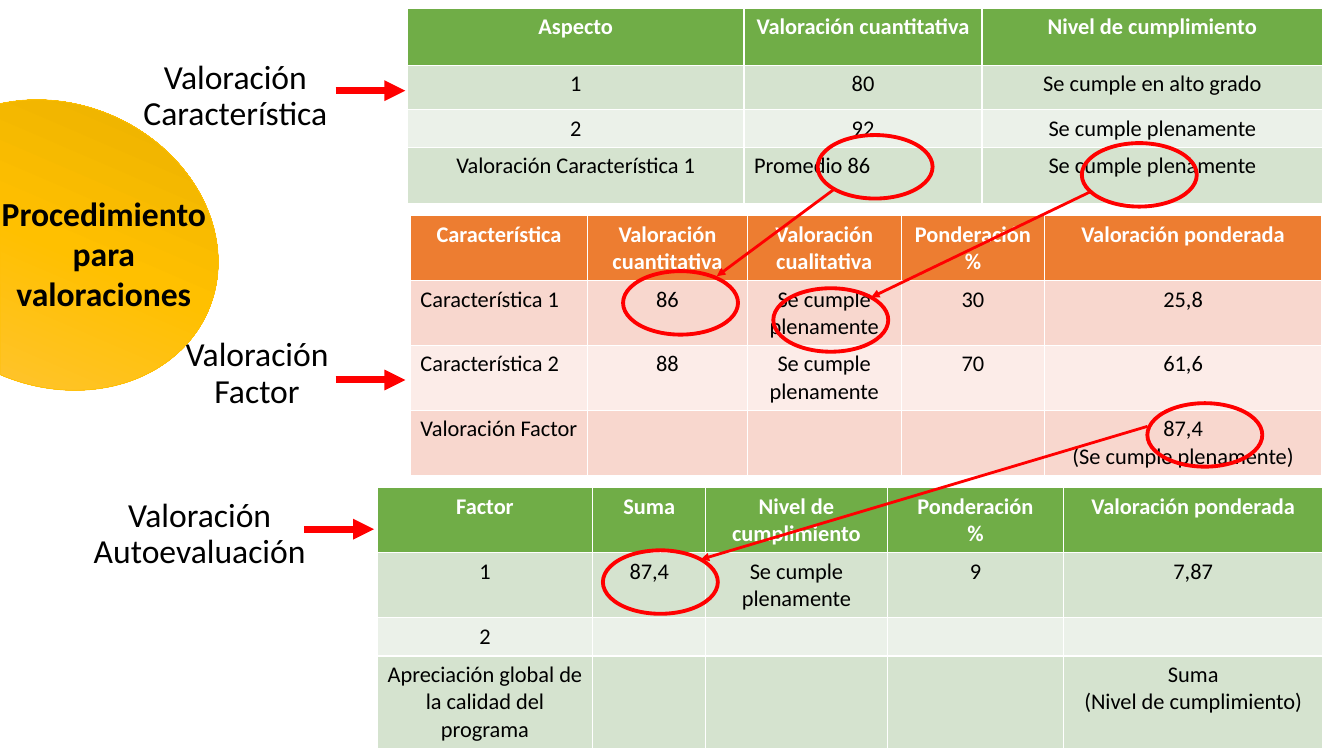
from copy import deepcopy

from lxml.etree import SubElement
from pptx import Presentation
from pptx.dml.color import RGBColor
from pptx.enum.shapes import MSO_CONNECTOR, MSO_SHAPE
from pptx.enum.text import MSO_ANCHOR, PP_ALIGN
from pptx.oxml.ns import qn
from pptx.util import Inches, Pt

BLACK = RGBColor(0x00, 0x00, 0x00)
WHITE = RGBColor(0xFF, 0xFF, 0xFF)
RED = RGBColor(0xFF, 0x00, 0x00)
GOLD = RGBColor(0xFF, 0xC0, 0x00)
LIGHT_GOLD = RGBColor(0xFF, 0xC6, 0x4B)
DARK_GOLD = RGBColor(0xE3, 0xAB, 0x00)
GREEN = RGBColor(0x70, 0xAD, 0x47)
GREEN_BAND = RGBColor(0xD5, 0xE3, 0xCF)
GREEN_PALE = RGBColor(0xEB, 0xF1, 0xE9)
ORANGE = RGBColor(0xED, 0x7D, 0x31)
ORANGE_BAND = RGBColor(0xF8, 0xD7, 0xCE)
ORANGE_PALE = RGBColor(0xFC, 0xEC, 0xE8)

GREEN_THEME = (GREEN, GREEN_BAND, GREEN_PALE)
ORANGE_THEME = (ORANGE, ORANGE_BAND, ORANGE_PALE)

HEADER_FONT = {"name": "Calibri", "size": Pt(16), "bold": True}
BODY_FONT = {"name": "Calibri", "size": Pt(16), "bold": False}
LABEL_FONT = {"name": "Calibri", "size": Pt(24), "bold": False}
TITLE_FONT = {"name": "Calibri", "size": Pt(24), "bold": True}

RING_SIZE = (1.14, 0.63)
STAGE_ARROW_LENGTH = 0.69

ASPECT_ROWS = [
    ["Aspecto", "Valoración cuantitativa", "Nivel de cumplimiento"],
    ["1", "80", "Se cumple en alto grado"],
    ["2", "92", "Se cumple plenamente"],
    ["Valoración Característica 1", "Promedio 86", "Se cumple plenamente"],
]
FEATURE_ROWS = [
    ["Característica", "Valoración cuantitativa", "Valoración cualitativa",
     "Ponderación\n%", "Valoración ponderada"],
    ["Característica 1", "86", "Se cumple plenamente", "30", "25,8"],
    ["Característica 2", "88", "Se cumple plenamente", "70", "61,6"],
    ["Valoración Factor", "", "", "", "87,4\n(Se cumple plenamente)"],
]
FACTOR_ROWS = [
    ["Factor", "Suma", "Nivel de cumplimiento", "Ponderación\n%", "Valoración ponderada"],
    ["1", "87,4", "Se cumple plenamente", "9", "7,87"],
    ["2", "", "", "", ""],
    ["Apreciación global de la calidad del programa", "", "", "",
     "Suma\n(Nivel de cumplimiento)"],
]

TABLES = [
    ((4.04, 0.08), [3.34, 2.36, 3.38], [0.57, 0.44, 0.37, 0.56],
     ASPECT_ROWS, GREEN_THEME, {(3, 1)}),
    ((4.07, 2.14), [1.76, 1.58, 1.53, 1.42, 2.75], [0.64] * 4,
     FEATURE_ROWS, ORANGE_THEME, {(1, 0), (2, 0), (3, 0)}),
    ((3.74, 4.84), [2.14, 1.12, 1.8, 1.75, 2.57], [0.63, 0.63, 0.37, 0.9],
     FACTOR_ROWS, GREEN_THEME, set()),
]
STAGES = [
    ((1.02, 0.57, 2.63, 0.8), "Valoración Característica", (2.31, 0.33)),
    ((1.36, 3.27, 2.38, 0.85), "Valoración Factor", (1.97, 0.5)),
    ((0.79, 4.86, 2.38, 0.85), "Valoración Autoevaluación", (2.23, 0.39)),
]
TRANSFERS = [
    ((8.11, 1.34), (0.16, 0.54), (6.18, 2.69), (0.93, 0.05)),
    ((10.73, 1.42), (0.09, 0.48), (7.67, 2.86), (0.97, 0.09)),
    ((11.38, 4.0), (0, 0.23), (5.98, 5.46), (0.97, 0.09)),
]


def style_paragraph(paragraph, font_format, color, alignment=PP_ALIGN.CENTER):
    paragraph.alignment = alignment
    for run in paragraph.runs or [paragraph.add_run()]:
        for name, value in font_format.items():
            setattr(run.font, name, value)
        run.font.color.rgb = color


def add_text(slide, box, text, font_format, anchor):
    text_frame = slide.shapes.add_textbox(*map(Inches, box)).text_frame
    for name, value in {"word_wrap": True, "vertical_anchor": anchor, "text": text}.items():
        setattr(text_frame, name, value)
    paragraph = text_frame.paragraphs[0]
    style_paragraph(paragraph, font_format, BLACK)
    return paragraph


def add_arrow(slide, start, end, width):
    arrow = slide.shapes.add_connector(
        MSO_CONNECTOR.STRAIGHT, *map(Inches, (*start, *end)))
    arrow.line.color.rgb = RED
    arrow.line.width = Pt(width)
    SubElement(arrow.line._get_or_add_ln(), qn("a:tailEnd"), type="triangle")
    SubElement(arrow._element.spPr, qn("a:effectLst"))


def shift(origin, offset):
    return origin[0] + offset[0], origin[1] + offset[1]


def add_valuation_table(slide, corner, widths, heights, rows, theme, left_cells):
    box = (*corner, sum(widths), sum(heights))
    table = slide.shapes.add_table(len(rows), len(widths), *map(Inches, box)).table
    for column, width in zip(table.columns, widths):
        column.width = Inches(width)
    for row, height in zip(table.rows, heights):
        row.height = Inches(height)
    header_fill, band_fill, pale_fill = theme
    for row_index, texts in enumerate(rows):
        is_header = row_index == 0
        body_fill = band_fill if row_index % 2 else pale_fill
        font_format = HEADER_FONT if is_header else BODY_FONT
        for column_index, text in enumerate(texts):
            cell = table.cell(row_index, column_index)
            cell.fill.solid()
            cell.fill.fore_color.rgb = header_fill if is_header else body_fill
            cell.text_frame.text = text
            is_left = (row_index, column_index) in left_cells
            alignment = PP_ALIGN.LEFT if is_left else PP_ALIGN.CENTER
            for paragraph in cell.text_frame.paragraphs:
                style_paragraph(paragraph, font_format, WHITE if is_header else BLACK, alignment)


def add_stage(slide, box, text, arrow_offset):
    add_text(slide, box, text, LABEL_FONT, MSO_ANCHOR.BOTTOM).line_spacing = 0.9
    start = shift(box, arrow_offset)
    add_arrow(slide, start, shift(start, (STAGE_ARROW_LENGTH, 0)), 5)


def add_transfer(slide, source, start_offset, target, end_offset):
    for corner in (source, target):
        ring = slide.shapes.add_shape(MSO_SHAPE.OVAL, *map(Inches, (*corner, *RING_SIZE)))
        ring.shadow.inherit = False
        ring.fill.background()
        ring.line.color.rgb = RED
        ring.line.width = Pt(2.75)
    add_arrow(slide, shift(source, start_offset), shift(target, end_offset), 2)


def add_title(slide, box):
    left, top, width, height = box
    chord = slide.shapes.add_shape(MSO_SHAPE.CHORD, *map(Inches, box))
    chord.shadow.inherit = False
    chord.rotation = 203.3
    chord.adjustments[0] = 26.92
    chord.adjustments[1] = 162
    chord.line.color.rgb = GOLD
    chord.line.width = Pt(0.5)
    chord.fill.gradient()
    chord.fill.gradient_angle = 270
    stop_list = chord._element.spPr.find(qn("a:gradFill")).find(qn("a:gsLst"))
    stop_list.insert(1, deepcopy(stop_list[0]))
    stops = zip(chord.fill.gradient_stops, (0, 0.5, 1), (LIGHT_GOLD, GOLD, DARK_GOLD))
    for stop, position, color in stops:
        stop.position = position
        stop.color.rgb = color
    add_text(slide, (left + 0.93, top + 0.83, 2.38, 1.31),
             "Procedimiento para valoraciones", TITLE_FONT, MSO_ANCHOR.TOP)


def main():
    presentation = Presentation()
    presentation.slide_width = Inches(13.33)
    presentation.slide_height = Inches(7.5)
    slide = presentation.slides.add_slide(presentation.slide_layouts[6])
    for table in TABLES:
        add_valuation_table(slide, *table)
    for stage in STAGES:
        add_stage(slide, *stage)
    for transfer in TRANSFERS:
        add_transfer(slide, *transfer)
    add_title(slide, (-1.09, 1.03, 3.29, 2.8))
    presentation.save("out.pptx")


if __name__ == "__main__":
    main()
